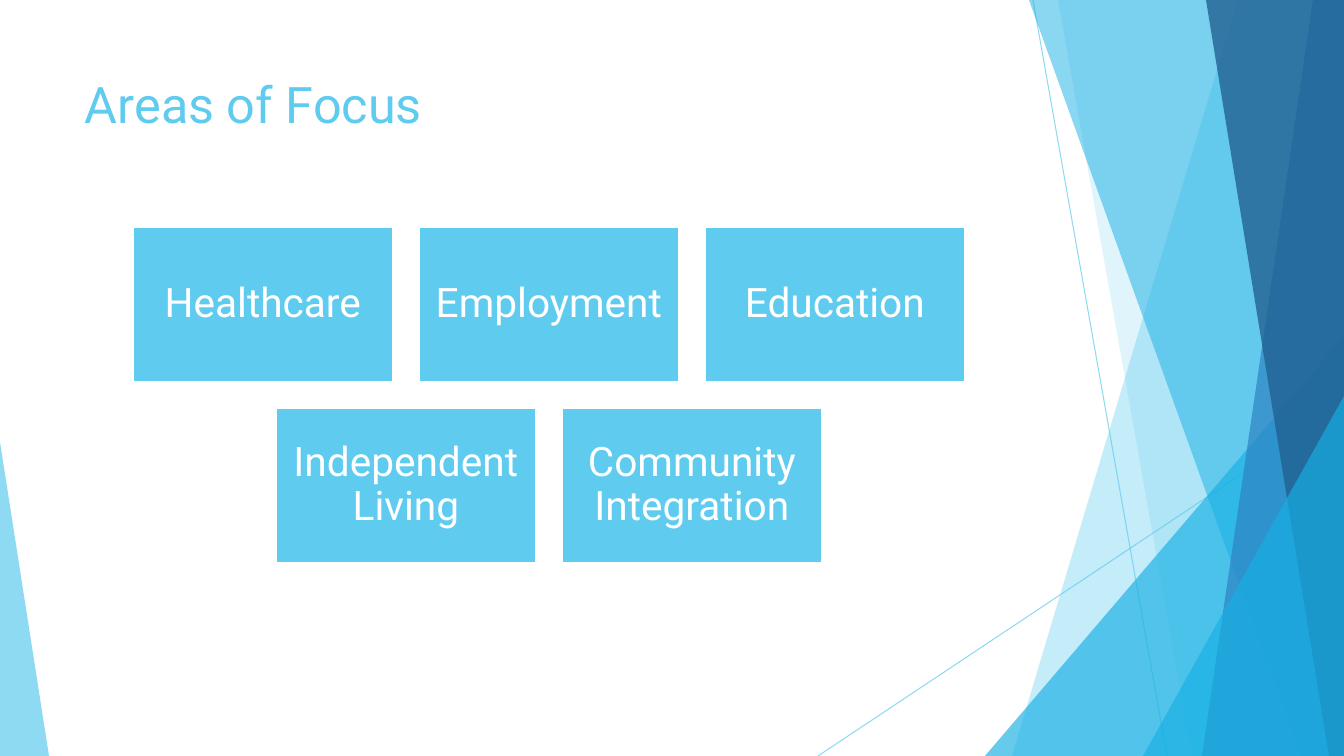
"""Build the Areas of Focus slide with its faceted blue backdrop."""
from lxml.etree import SubElement
from pptx import Presentation
from pptx.dml.color import RGBColor
from pptx.enum.shapes import MSO_CONNECTOR, MSO_SHAPE
from pptx.enum.text import MSO_ANCHOR, PP_ALIGN
from pptx.oxml.ns import qn
from pptx.util import Pt

WIDE, HIGH = 1344, 756
SCALE = 12192000 / WIDE
SKY, CYAN, BLUE, NAVY, WHITE = "5FCBEF", "17B0E4", "2E83C3", "226292", "FFFFFF"


def px(*sizes):
    return [round(size * SCALE) for size in sizes]


def tint(fill, hue, props=None, alpha=100):
    fill.solid()
    fill.fore_color.rgb = RGBColor.from_string(hue)
    if alpha < 100:
        color = props.find(".//" + qn("a:srgbClr"))
        SubElement(color, qn("a:alpha")).set("val", str(alpha * 1000))


deck = Presentation()
deck.slide_width, deck.slide_height = px(WIDE, HIGH)
slide = deck.slides.add_slide(deck.slide_layouts[6])
shapes = slide.shapes

for ends in [(1033, 0, 1167, HIGH), (WIDE, 406, 818, HIGH)]:
    ray = shapes.add_connector(MSO_CONNECTOR.STRAIGHT, *px(*ends))
    props = ray._element.spPr
    ray.line.width = Pt(0.75)
    tint(ray.line.fill, SKY, props, 70)
    SubElement(props, qn("a:effectLst"))

facets = [
    ("pane", (1238, 1012), SKY, 36),
    ("pane", (1058, 1192), SKY, 20),
    ("wedge", (985, 336, 359, 1), CYAN, 66),
    ("pane", (1029, 1301), CYAN, 50),
    ("pane", (1313, 1202), BLUE, 70),
    ("pane", (1206, 1329), NAVY, 80),
    ("wedge", (1143, 396, 201, 1), CYAN, 66),
    ("wedge", (0, 442, 49, 0), SKY, 70),
]
for kind, form, hue, alpha in facets:
    if kind == "pane":
        head, foot = form
        path = shapes.build_freeform(head, 0, SCALE)
        path.add_line_segments([(WIDE, 0), (WIDE, HIGH), (foot, HIGH)])
        facet = path.convert_to_shape()
    else:
        left, top, width, peak = form
        facet = shapes.add_shape(MSO_SHAPE.ISOSCELES_TRIANGLE, *px(left, top, width, HIGH - top))
        facet.adjustments[0] = peak
    tint(facet.fill, hue, facet._element.spPr, alpha)
    facet.line.fill.background()
    facet.shadow.inherit = False

title = shapes.add_textbox(*px(75, 68, 948, 145))
title.text_frame.word_wrap = True
title.text_frame.text = "Areas of Focus"
font = title.text_frame.paragraphs[0].runs[0].font
font.name, font.size = "Roboto", Pt(36)
tint(font.fill, SKY)

rows = [
    ["Healthcare", "Employment", "Education"],
    ["Independent Living", "Community Integration"],
]
MID, TOP, BOX_W, BOX_H, GAP = 549, 227, 260, 155, 26
for row, names in enumerate(rows):
    start = MID - (len(names) * (BOX_W + GAP) - GAP) // 2
    for col, name in enumerate(names):
        left, top = start + col * (BOX_W + GAP), TOP + row * (BOX_H + GAP)
        box = shapes.add_shape(MSO_SHAPE.RECTANGLE, *px(left, top, BOX_W, BOX_H))
        box.shadow.inherit = False
        tint(box.fill, SKY)
        tint(box.line.fill, WHITE)
        box.line.width = Pt(1.5)
        frame = box.text_frame
        frame.word_wrap = True
        frame.vertical_anchor = MSO_ANCHOR.MIDDLE
        frame.margin_left, frame.margin_right, frame.margin_top, frame.margin_bottom = px(12, 12, 12, 12)
        frame.text = name
        para = frame.paragraphs[0]
        para.alignment, para.line_spacing = PP_ALIGN.CENTER, 0.9
        font = para.runs[0].font
        font.name, font.size = "Roboto", Pt(29)
        tint(font.fill, WHITE)

deck.save("out.pptx")
